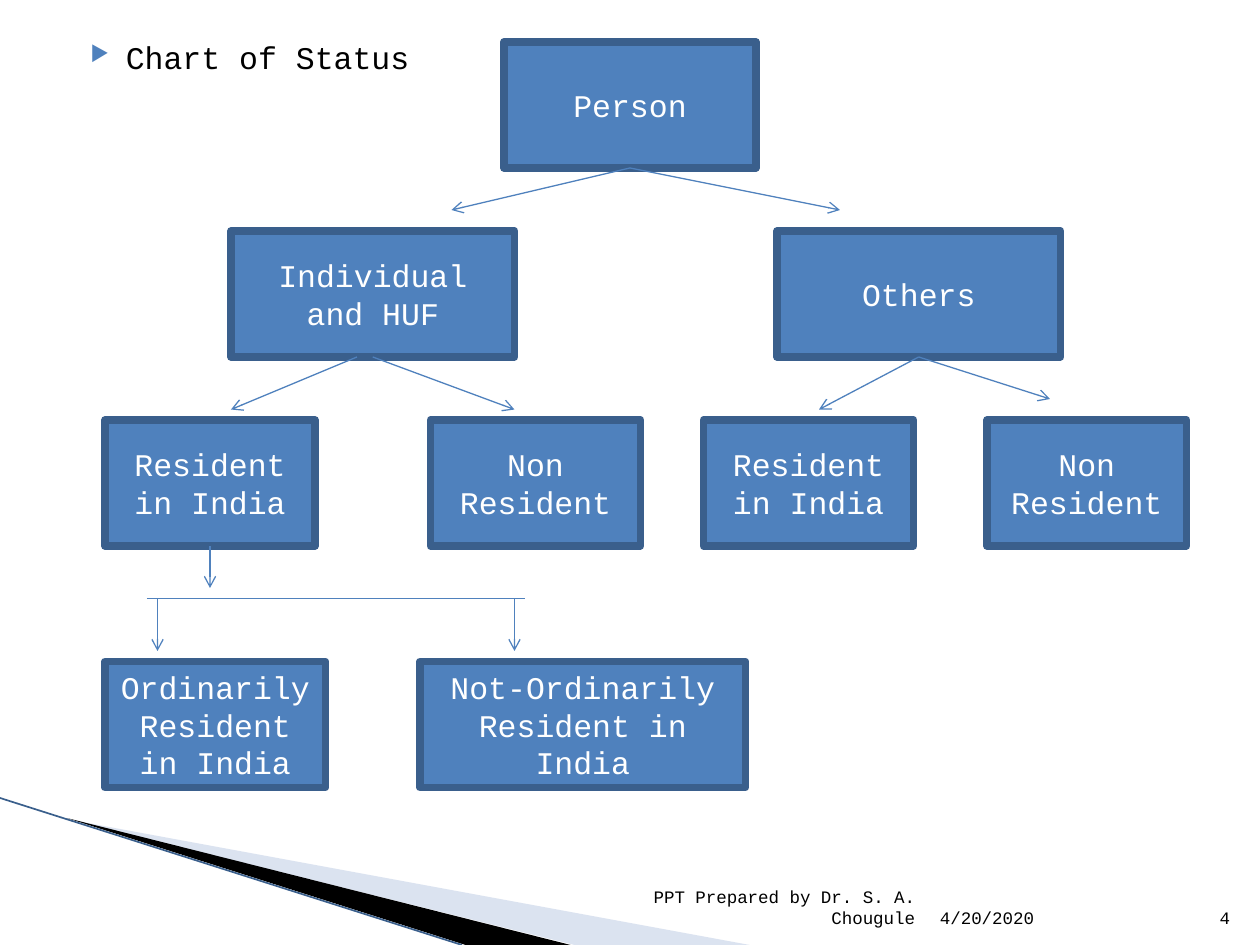
from dataclasses import dataclass

from lxml import etree
from pptx import Presentation
from pptx import util as u
from pptx.dml.color import RGBColor
from pptx.enum import shapes, text
from pptx.oxml.ns import qn


@dataclass(frozen=True)
class Theme:
    """Colours, type and line sizes of the slide."""
    accent: str = "4F81BD"
    border: str = "3A5F8C"
    pale: str = "A7B9DB"
    black: str = "000000"
    white: str = "FFFFFF"
    font: str = "Courier New"
    body: float = 18
    footer: float = 10
    border_width: float = 4.33
    arrow_width: float = 0.75
    edge_width: float = 0.95


THEME = Theme()
BOX_HEIGHT = 72
BOXES = {
    "person": ("Person", 288, 24, 144),
    "individual": ("Individual and HUF", 132, 132, 162),
    "others": ("Others", 444, 132, 162),
    "individual_resident": ("Resident in India", 60, 240, 120),
    "individual_non_resident": ("Non Resident", 246, 240, 120),
    "others_resident": ("Resident in India", 402, 240, 120),
    "others_non_resident": ("Non Resident", 564, 240, 114),
    "ordinary": ("Ordinarily Resident in India", 60, 378, 126),
    "not_ordinary": ("Not-Ordinarily Resident in India", 240, 378, 186),
}
JOINED_ARROWS = [
    ("person", (258, 120)),
    ("person", (480, 120)),
    ("individual", (294, 234)),
    ("others", (468, 234)),
    ("others", (600, 228)),
    ("individual_resident", (120, 336)),
]
FREE_ARROWS = [
    ((204, 204), (132, 234)),
    ((90, 342), (90, 372)),
    ((294, 342), (294, 372)),
]
FOOTERS = [
    ("4", 681, 29, text.PP_ALIGN.RIGHT),
    ("PPT Prepared by Dr. S. A. Chougule", 345, 185, text.PP_ALIGN.RIGHT),
    ("4/20/2020", 530, 151, text.PP_ALIGN.LEFT),
]


def add_child(parent, tag, **attributes):
    """Append a DrawingML element and return it."""
    return etree.SubElement(parent, qn(tag), attributes)


def write_text(shape, words, size=THEME.body, color=THEME.black,
               align=text.PP_ALIGN.LEFT, anchor=text.MSO_ANCHOR.TOP, bullet=False):
    """Put one formatted paragraph into a shape."""
    frame = shape.text_frame
    frame.word_wrap = True
    frame.vertical_anchor = anchor
    paragraph = frame.paragraphs[0]
    paragraph.alignment = align
    if bullet:
        add_bullet(paragraph)
    run = paragraph.add_run()
    run.text = words
    run.font.name = THEME.font
    run.font.size = u.Pt(size)
    run.font.color.rgb = RGBColor.from_string(color)


def add_bullet(paragraph):
    """Give a paragraph a hanging triangle bullet."""
    properties = paragraph._p.get_or_add_pPr()
    properties.set("marL", str(u.Pt(28.8)))
    properties.set("indent", str(u.Pt(-20.2)))
    color = add_child(properties, "a:buClr")
    add_child(color, "a:srgbClr", val=THEME.accent)
    add_child(properties, "a:buSzPct", val="68000")
    add_child(properties, "a:buChar", char="▶")


def add_text_box(slide, words, left, top, width, height, **style):
    """Add a wrapped text box."""
    shape = slide.shapes.add_textbox(*map(u.Pt, (left, top, width, height)))
    write_text(shape, words, **style)


def add_box(slide, words, left, top, width):
    """Add one bordered box of the chart."""
    shape = slide.shapes.add_shape(
        shapes.MSO_SHAPE.RECTANGLE, *map(u.Pt, (left, top, width, BOX_HEIGHT)))
    shape.shadow.inherit = False
    shape.fill.solid()
    shape.fill.fore_color.rgb = RGBColor.from_string(THEME.accent)
    shape.line.color.rgb = RGBColor.from_string(THEME.border)
    shape.line.width = u.Pt(THEME.border_width)
    write_text(shape, words, color=THEME.white, align=text.PP_ALIGN.CENTER,
               anchor=text.MSO_ANCHOR.MIDDLE)
    return shape


def add_line(slide, start, end, color=THEME.accent, width=THEME.arrow_width, arrow=False):
    """Add a straight line, with an arrowhead at its end if wanted."""
    connector = slide.shapes.add_connector(
        shapes.MSO_CONNECTOR.STRAIGHT, *map(u.Pt, (*start, *end)))
    connector.line.color.rgb = RGBColor.from_string(color)
    connector.line.width = u.Pt(width)
    if arrow:
        add_child(connector.line._get_or_add_ln(), "a:tailEnd", type="arrow")
    add_child(connector._element.spPr, "a:effectLst")
    return connector


def add_wedge(slide, points, color, opacity=100):
    """Add a filled triangle to the corner decoration."""
    start, *others = [tuple(map(u.Pt, point)) for point in points]
    builder = slide.shapes.build_freeform(*start)
    builder.add_line_segments(others)
    shape = builder.convert_to_shape()
    shape.shadow.inherit = False
    shape.fill.solid()
    shape.fill.fore_color.rgb = RGBColor.from_string(color)
    shape.line.fill.background()
    if opacity < 100:
        fill = shape._element.spPr.find(qn("a:solidFill"))
        add_child(fill[0], "a:alpha", val=str(opacity * 1000))


def add_decoration(slide):
    """Draw the wedges and edge line in the lower left corner."""
    add_wedge(slide, [(39.6, 468.4), (428.4, 540), (328.3, 540)], THEME.pale, 40)
    add_wedge(slide, [(38.2, 467.5), (326, 540), (266, 540)], THEME.black)
    add_line(slide, (0, 456), (264, 540), THEME.border, THEME.edge_width)


def add_chart_of_status(slide):
    """Draw the boxes and the lines between them."""
    boxes = {name: add_box(slide, *box) for name, box in BOXES.items()}
    for name, end in JOINED_ARROWS:
        _, left, top, width = BOXES[name]
        start = (left + width / 2, top + BOX_HEIGHT)
        add_line(slide, start, end, arrow=True).begin_connect(boxes[name], 2)
    add_line(slide, (84, 342), (300, 342))
    for start, end in FREE_ARROWS:
        add_line(slide, start, end, arrow=True)


def main():
    """Build and save the slide."""
    presentation = Presentation()
    presentation.slide_width, presentation.slide_height = u.Pt(720), u.Pt(540)
    slide = presentation.slides.add_slide(presentation.slide_layouts[6])
    add_decoration(slide)
    add_text_box(slide, "Chart of Status", 36, 18, 648, 504, bullet=True)
    add_chart_of_status(slide)
    for words, left, width, align in FOOTERS:
        add_text_box(slide, words, left, 505, width, 29, size=THEME.footer,
                     align=align, anchor=text.MSO_ANCHOR.BOTTOM)
    presentation.save("out.pptx")


if __name__ == "__main__":
    main()
